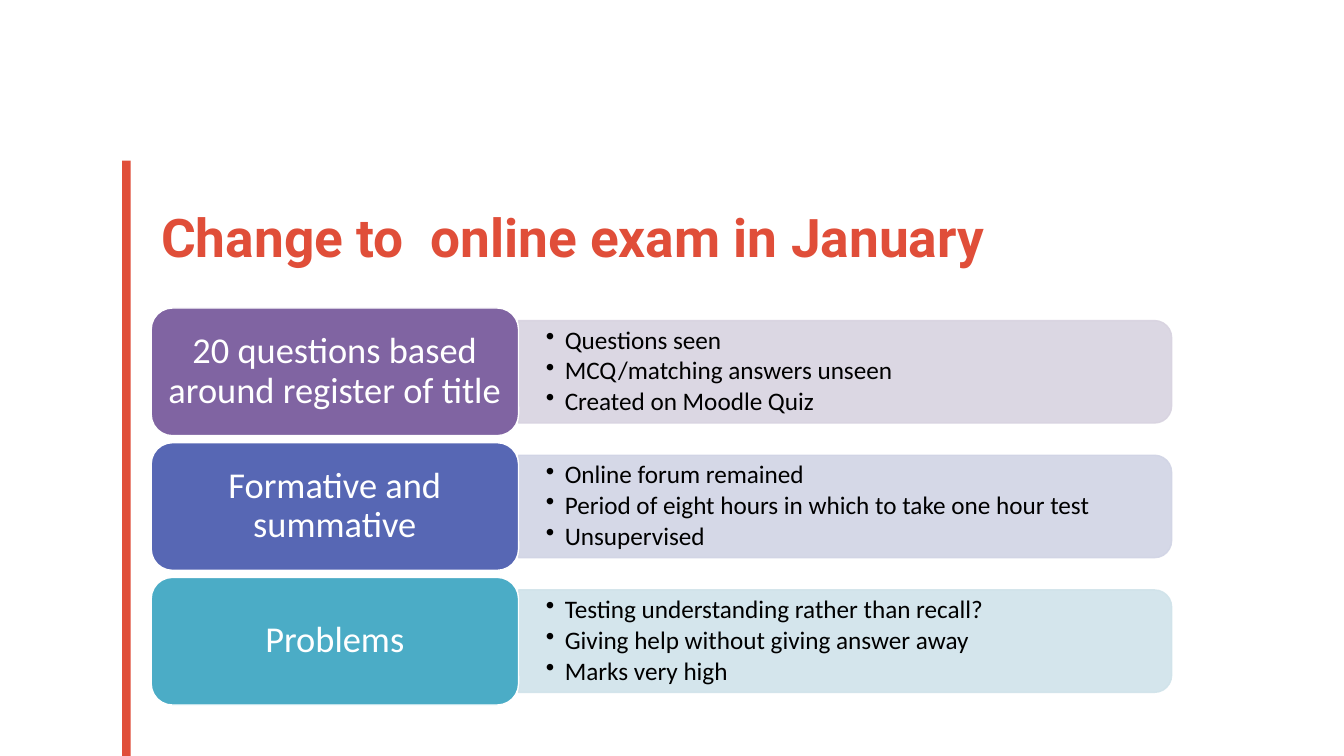
from pptx import Presentation
from pptx.dml.color import RGBColor
from pptx.enum import shapes, text
from pptx.oxml import xmlchemy as xc
from pptx.util import Pt
from lxml import etree

NS = "http://schemas.openxmlformats.org/drawingml/2006/main"
HEX = {"red": "E04E39", "white": "FFFFFF", "black": "000000",
       "plum": "8064A2", "lilac": "D8D3E0",
       "blue": "5767B4", "mist": "D1D4E5",
       "teal": "4BACC6", "ice": "D0E3EA"}
RGB = {name: RGBColor.from_string(code) for name, code in HEX.items()}
KIND = shapes.MSO_SHAPE
MID = text.MSO_ANCHOR.MIDDLE


def add_block(kind, x, y, w, h, fill, edge=None):
    block = slide.shapes.add_shape(kind, Pt(x), Pt(y), Pt(w), Pt(h))
    block.shadow.inherit = False
    block.fill.solid()
    block.fill.fore_color.rgb = RGB[fill]
    if edge:
        block.line.color.rgb = RGB[edge]
        block.line.width = Pt(1)
    else:
        block.line.fill.background()
    return block


def style(par, face, size, tint):
    par.line_spacing = 0.9
    par.font.name = face
    par.font.size = Pt(size)
    par.font.color.rgb = RGB[tint]


deck = Presentation()
deck.slide_width, deck.slide_height = Pt(960), Pt(540)
slide = deck.slides.add_slide(deck.slide_layouts[6])

# Red bar at the left
add_block(KIND.RECTANGLE, 87.2, 114.7, 6.2, 425.3, "red")

# Title
box = slide.shapes.add_textbox(Pt(108), Pt(137.5), Pt(733), Pt(58.3))
frame = box.text_frame
frame.word_wrap = True
frame.vertical_anchor = text.MSO_ANCHOR.BOTTOM
head = frame.paragraphs[0]
head.text = "Change to  online exam in January"
style(head, "Roboto", 38, "red")
head.font.bold = True

# Rows: label, its colour, panel colour, points
ROWS = [
    ("20 questions based around register of title", "plum", "lilac",
     ["Questions seen", "MCQ/matching answers unseen",
      "Created on Moodle Quiz"]),
    ("Formative and summative", "blue", "mist",
     ["Online forum remained",
      "Period of eight hours in which to take one hour test",
      "Unsupervised"]),
    ("Problems", "teal", "ice",
     ["Testing understanding rather than recall?",
      "Giving help without giving answer away", "Marks very high"]),
]
LEFT, TOP, STEP = 108, 220, 96.2
PILL_W, PILL_H = 262.4, 91.2
WIDE, HIGH = 466.5, 73.2
EDGE = LEFT + PILL_W

for i, (label, dark, pale, points) in enumerate(ROWS):
    mid = TOP + i * STEP + PILL_H / 2

    # Pale panel, turned so that its round corners face right
    panel = add_block(KIND.ROUND_2_SAME_RECTANGLE,
                      EDGE + (WIDE - HIGH) / 2, mid - WIDE / 2,
                      HIGH, WIDE, pale, pale)
    panel.rotation = 90
    for tone in panel.element.spPr.iter(f"{{{NS}}}srgbClr"):
        etree.SubElement(tone, f"{{{NS}}}alpha", val="90000")

    # Bullet points
    box = slide.shapes.add_textbox(Pt(EDGE), Pt(mid - HIGH / 2),
                                   Pt(WIDE), Pt(HIGH))
    frame = box.text_frame
    frame.word_wrap = True
    frame.vertical_anchor = MID
    frame.margin_left = frame.margin_right = Pt(19.5)
    for n, point in enumerate(points):
        par = frame.add_paragraph() if n else frame.paragraphs[0]
        par.text = point
        props = par._p.get_or_add_pPr()
        props.set("marL", str(Pt(13.5)))
        props.set("indent", str(-Pt(13.5)))
        etree.SubElement(props, f"{{{NS}}}buChar", char="•")
        style(par, "Calibri", 18, "black")
        par.space_after = Pt(2.5)

    # Label
    pill = add_block(KIND.ROUNDED_RECTANGLE, LEFT, mid - PILL_H / 2,
                     PILL_W, PILL_H, dark, "white")
    frame = pill.text_frame
    frame.word_wrap = True
    frame.vertical_anchor = MID
    # The round corners already inset the text by about 4.5
    frame.margin_left = frame.margin_right = Pt(7.5)
    par = frame.paragraphs[0]
    par.text = label
    par.alignment = text.PP_ALIGN.CENTER
    style(par, "Calibri", 26, "white")

deck.save("out.pptx")
